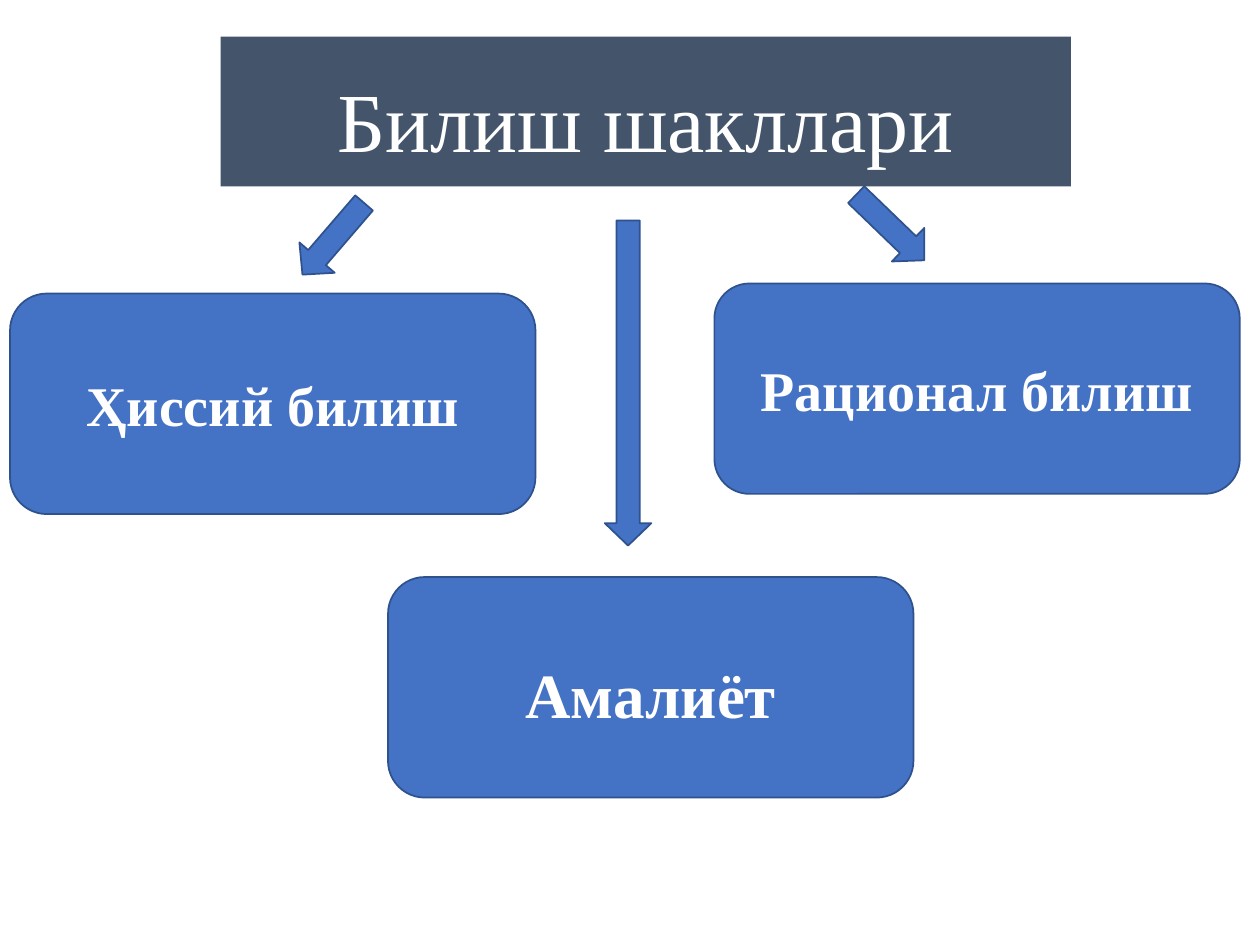
from pptx import Presentation
from pptx.dml.color import RGBColor
from pptx.enum import shapes, text
from pptx.util import Inches, Pt

FONT = "Times New Roman"
WHITE, SLATE, BLUE, NAVY = "FFFFFF", "44546A", "4472C4", "2F528F"
BOX_WIDTH = 4.17
ARROW_WIDTH = 0.37


def color(value):
    return RGBColor.from_string(value)


def add_shape(page, kind, left, top, width, height, fill, line=None):
    shape = page.shapes.add_shape(
        kind, Inches(left), Inches(top), Inches(width), Inches(height))
    shape.shadow.inherit = False
    shape.fill.solid()
    shape.fill.fore_color.rgb = color(fill)
    if line:
        shape.line.color.rgb = color(line)
        shape.line.width = Pt(1)
    else:
        shape.line.fill.background()
    return shape


def write(shape, words, size, bold=True, spacing=None):
    frame = shape.text_frame
    frame.word_wrap = True
    frame.vertical_anchor = text.MSO_ANCHOR.MIDDLE
    para = frame.paragraphs[0]
    para.alignment = text.PP_ALIGN.CENTER
    para.line_spacing = spacing
    span = para.add_run()
    span.text = words
    span.font.name = FONT
    span.font.size = Pt(size)
    span.font.bold = bold
    span.font.color.rgb = color(WHITE)


def add_title(page, words):
    banner = add_shape(page, shapes.MSO_SHAPE.RECTANGLE,
                       1.75, 0.29, 6.75, 1.19, SLATE)
    write(banner, words, 48, bold=False, spacing=1.15)


def add_box(page, left, top, height, words, size, spacing=None):
    box = add_shape(page, shapes.MSO_SHAPE.ROUNDED_RECTANGLE,
                    left, top, BOX_WIDTH, height, BLUE, NAVY)
    write(box, words, size, spacing=spacing)


def add_arrow(page, left, top, length, angle=0):
    arrow = add_shape(page, shapes.MSO_SHAPE.DOWN_ARROW,
                      left, top, ARROW_WIDTH, length, BLUE, NAVY)
    arrow.adjustments[0] = 0.5
    arrow.adjustments[1] = 0.48
    arrow.rotation = angle


def main():
    deck = Presentation()
    deck.slide_width, deck.slide_height = Inches(10), Inches(7.5)
    page = deck.slides.add_slide(deck.slide_layouts[6])

    add_title(page, "Билиш шакллари")
    add_box(page, 0.08, 2.33, 1.75, "Ҳиссий билиш", 32)
    add_box(page, 5.67, 2.25, 1.67, "Рационал билиш", 32)
    add_arrow(page, 6.88, 1.43, 0.75, angle=314)
    add_arrow(page, 2.46, 1.52, 0.75, angle=40.7)
    add_box(page, 3.08, 4.58, 1.75, "Амалиёт", 36, spacing=1.15)
    add_arrow(page, 4.8, 1.75, 2.58)

    deck.save("out.pptx")


if __name__ == "__main__":
    main()
